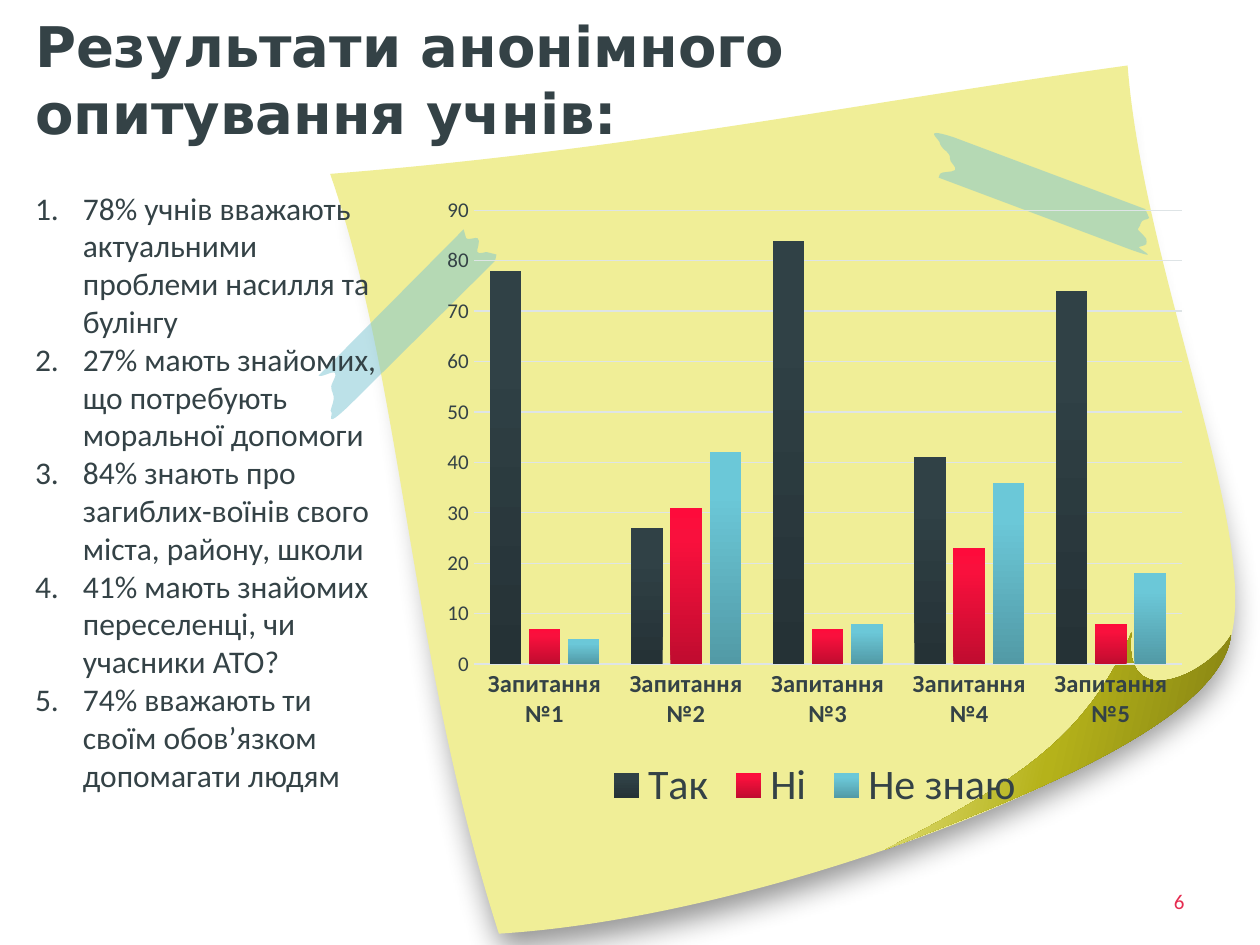
from math import cos, radians, sin

from lxml import etree
from pptx import Presentation
from pptx.chart.data import CategoryChartData
from pptx.dml.color import RGBColor
from pptx.enum.chart import XL_CHART_TYPE, XL_LEGEND_POSITION, XL_TICK_MARK
from pptx.enum.text import MSO_ANCHOR, PP_ALIGN
from pptx.oxml.ns import qn
from pptx.util import Inches, Pt

COLUMNS = XL_CHART_TYPE.COLUMN_CLUSTERED
BOTTOM = XL_LEGEND_POSITION.BOTTOM
NO_TICK = XL_TICK_MARK.NONE
MIDDLE, TOP = MSO_ANCHOR.MIDDLE, MSO_ANCHOR.TOP
LEFT, RIGHT = PP_ALIGN.LEFT, PP_ALIGN.RIGHT

WIDTH, HEIGHT = Inches(10), Inches(7.5)
GRID_COLUMNS, GRID_ROWS = 1000, 750
INK, RED, PAPER, TAPE, GRID = "344246", "E52C50", "F0EE97", "7BC5D2", "DEE4E6"

ANSWERS = [
    "78% учнів вважають актуальними проблеми насилля та булінгу",
    "27% мають знайомих, що потребують моральної допомоги",
    "84% знають про загиблих-воїнів свого міста, району, школи",
    "41% мають знайомих переселенці, чи учасники АТО?",
    "74% вважають ти своїм обов’язком допомагати людям",
]
SERIES = [
    ("Так", (78, 27, 84, 41, 74), ("253236", "304146", "304247")),
    ("Ні", (7, 31, 7, 23, 8), ("C00C2F", "F9103D", "FE0B3B")),
    ("Не знаю", (5, 42, 8, 36, 18), ("529AA6", "6BC8D8", "69CADB")),
]

UNDER_SHEET = (325, 104, 639, 598), 351.2, [
    (283, 156), (522, 138, 672, 113, 883, 84), (898, 280, 1039, 479, 943, 551),
    (870, 613, 612, 726, 397, 740), (325, 515, 340, 323, 283, 156),
]
TOP_SHEET = (306, 84, 661, 620), 351.2, [
    (262, 138), (502, 119, 684, 81, 895, 52), (910, 248, 1044, 517, 943, 542),
    (916, 607, 610, 728, 396, 741), (324, 517, 320, 304, 262, 138),
]
CURL = (800, 423, 73, 322), 237.7, [
    (977, 504), (968, 580, 768, 648, 703, 674), (814, 617, 863, 582, 898, 502),
    (890, 567, 959, 536, 977, 504),
]
LEFT_TAPE = (226, 240, 185, 34), 315, [
    (253, 298), (368, 182), (370, 189), (371, 191, 378, 188, 379, 189),
    (382, 191, 378, 198, 379, 200), (380, 202, 385, 200, 386, 200),
    (386, 200, 394, 202, 394, 202), (393, 207), (277, 322),
    (256, 342, 265, 328, 263, 327),
    (261, 327, 265, 320, 265, 316), (265, 313, 263, 310, 263, 308),
    (262, 305, 268, 298, 266, 296), (264, 294, 255, 300, 253, 298),
]
RIGHT_TAPE = (730, 136, 192, 34), 20.5, [
    (757, 109), (909, 166), (912, 173), (911, 175, 906, 173, 905, 178),
    (905, 180, 905, 178, 903, 182), (904, 184, 912, 190, 910, 192),
    (911, 195, 906, 195, 904, 196), (902, 197, 925, 208, 897, 198),
    (745, 141), (745, 140, 745, 139, 746, 138), (747, 136, 756, 137, 758, 135),
    (760, 133, 753, 128, 754, 126), (754, 123, 753, 122, 751, 120),
    (749, 119, 746, 115, 746, 114), (747, 111, 729, 100, 757, 109),
]


def color(value):
    return RGBColor.from_string(value)


def share(left, top, width, height):
    return int(WIDTH * left), int(HEIGHT * top), int(WIDTH * width), int(HEIGHT * height)


def set_font(font, size, value=INK, bold=False, name="Calibri"):
    font.size, font.bold, font.name = Pt(size), bold, name
    font.color.rgb = color(value)


def set_gradient(fill, properties, stops, clockwise_angle):
    fill.gradient()
    fill.gradient_angle = 360 - clockwise_angle
    stop_list = properties.find(".//" + qn("a:gsLst"))
    for stop in list(stop_list):
        stop_list.remove(stop)
    for position, value in stops:
        stop = etree.SubElement(stop_list, qn("a:gs"), pos=str(position * 1000))
        etree.SubElement(stop, qn("a:srgbClr"), val=value)


def turn_back(x, y, center, angle):
    cosine, sine = cos(radians(angle)), sin(radians(angle))
    across, down = x - center[0], y - center[1]
    return across * cosine + down * sine, down * cosine - across * sine


def add_outline(slide, box, outline, value):
    (column, row, columns, rows), angle, segments = outline
    left, top, width, height = box
    unit_x, unit_y = width / GRID_COLUMNS, height / GRID_ROWS
    frame_width, frame_height = round(columns * unit_x), round(rows * unit_y)
    center = left + (column + columns / 2) * unit_x, top + (row + rows / 2) * unit_y

    builder = slide.shapes.build_freeform(0, 0, scale=1.0)
    builder.add_line_segments([(frame_width, 0), (frame_width, frame_height)], close=True)
    shape = builder.convert_to_shape()
    shape.left, shape.top = round(left + column * unit_x), round(top + row * unit_y)
    shape.width, shape.height = frame_width, frame_height
    shape.rotation = angle

    contour = shape._element.spPr.find(".//" + qn("a:pathLst"))[0]
    for child in list(contour):
        contour.remove(child)
    for index, segment in enumerate(segments):
        tag = "a:moveTo" if index == 0 else "a:lnTo" if len(segment) == 2 else "a:cubicBezTo"
        command = etree.SubElement(contour, qn(tag))
        for x, y in zip(segment[::2], segment[1::2]):
            across, down = turn_back(left + x * unit_x, top + y * unit_y, center, angle)
            etree.SubElement(command, qn("a:pt"), x=str(round(across + frame_width / 2)),
                             y=str(round(down + frame_height / 2)))
    etree.SubElement(contour, qn("a:close"))

    shape.shadow.inherit = False
    shape.fill.solid()
    shape.fill.fore_color.rgb = color(value)
    shape.line.fill.background()
    return shape


def add_note(slide, box):
    under = add_outline(slide, box, UNDER_SHEET, PAPER)
    effects = under._element.spPr.find(qn("a:effectLst"))
    shadow = etree.SubElement(effects, qn("a:outerShdw"), blurRad=str(Pt(17)),
                              dist=str(Pt(9)), dir=str(80 * 60000))
    shade = etree.SubElement(shadow, qn("a:srgbClr"), val="000000")
    etree.SubElement(shade, qn("a:alpha"), val="41000")
    add_outline(slide, box, TOP_SHEET, PAPER)
    curl = add_outline(slide, box, CURL, PAPER)
    set_gradient(curl.fill, curl._element.spPr,
                 [(0, "797711"), (50, "B5B21A"), (100, PAPER)], 315)
    for outline in (LEFT_TAPE, RIGHT_TAPE):
        tape = add_outline(slide, box, outline, TAPE)
        tint = tape._element.spPr.find(qn("a:solidFill")).find(qn("a:srgbClr"))
        etree.SubElement(tint, qn("a:alpha"), val="50000")


def add_text(slide, box, lines, size, value=INK, anchor=TOP, align=LEFT,
             bold=False, name="Calibri", numbered=False):
    frame = slide.shapes.add_textbox(*box).text_frame
    frame.word_wrap = True
    frame.vertical_anchor = anchor
    for index, line in enumerate(lines):
        paragraph = frame.paragraphs[0] if index == 0 else frame.add_paragraph()
        paragraph.text = line
        paragraph.alignment = align
        if numbered:
            properties = paragraph._p.get_or_add_pPr()
            properties.set("marL", str(Inches(0.38)))
            properties.set("indent", str(-Inches(0.38)))
            etree.SubElement(properties, qn("a:buFont"), typeface="+mj-lt")
            etree.SubElement(properties, qn("a:buAutoNum"), type="arabicPeriod")
        set_font(paragraph.font, size, value, bold, name)


def add_survey_chart(slide, box):
    data = CategoryChartData()
    data.categories = [f"Запитання №{number}" for number in range(1, 6)]
    for name, values, _ in SERIES:
        data.add_series(name, values)
    chart = slide.shapes.add_chart(COLUMNS, *box, data).chart
    chart.has_title = False
    set_font(chart.font, 10)
    chart.has_legend = True
    chart.legend.position = BOTTOM
    chart.legend.include_in_layout = False
    set_font(chart.legend.font, 24)
    for axis, size, bold in ((chart.category_axis, 14, True), (chart.value_axis, 12, False)):
        axis.major_tick_mark = axis.minor_tick_mark = NO_TICK
        set_font(axis.tick_labels.font, size, bold=bold)
    chart.value_axis.format.line.fill.background()
    for part in (chart.category_axis, chart.value_axis.major_gridlines):
        part.format.line.color.rgb = color(GRID)
        part.format.line.width = Pt(0.75)
    plot = chart.plots[0]
    plot.gap_width, plot.overlap, plot.vary_by_categories = 100, -24, False
    for series, (_, _, shades) in zip(plot.series, SERIES):
        series.invert_if_negative = False
        set_gradient(series.format.fill, series._element.get_or_add_spPr(),
                     zip((0, 80, 100), shades), 270)


def main():
    presentation = Presentation()
    presentation.slide_width, presentation.slide_height = WIDTH, HEIGHT
    slide = presentation.slides.add_slide(presentation.slide_layouts[6])
    add_text(slide, share(0.018, 0, 0.71, 0.167), ["Результати анонімного опитування учнів:"],
             32, anchor=MIDDLE, bold=True, name="DejaVu Sans")
    add_text(slide, share(0.717, 0.927, 0.233, 0.053), ["6"], 12, RED, MIDDLE, RIGHT)
    add_note(slide, share(0, 0, 1, 1))
    add_survey_chart(slide, share(0.343, 0.196, 0.607, 0.671))
    add_text(slide, share(0.018, 0.193, 0.3, 0.7), ANSWERS, 18, numbered=True)
    presentation.save("out.pptx")


if __name__ == "__main__":
    main()
